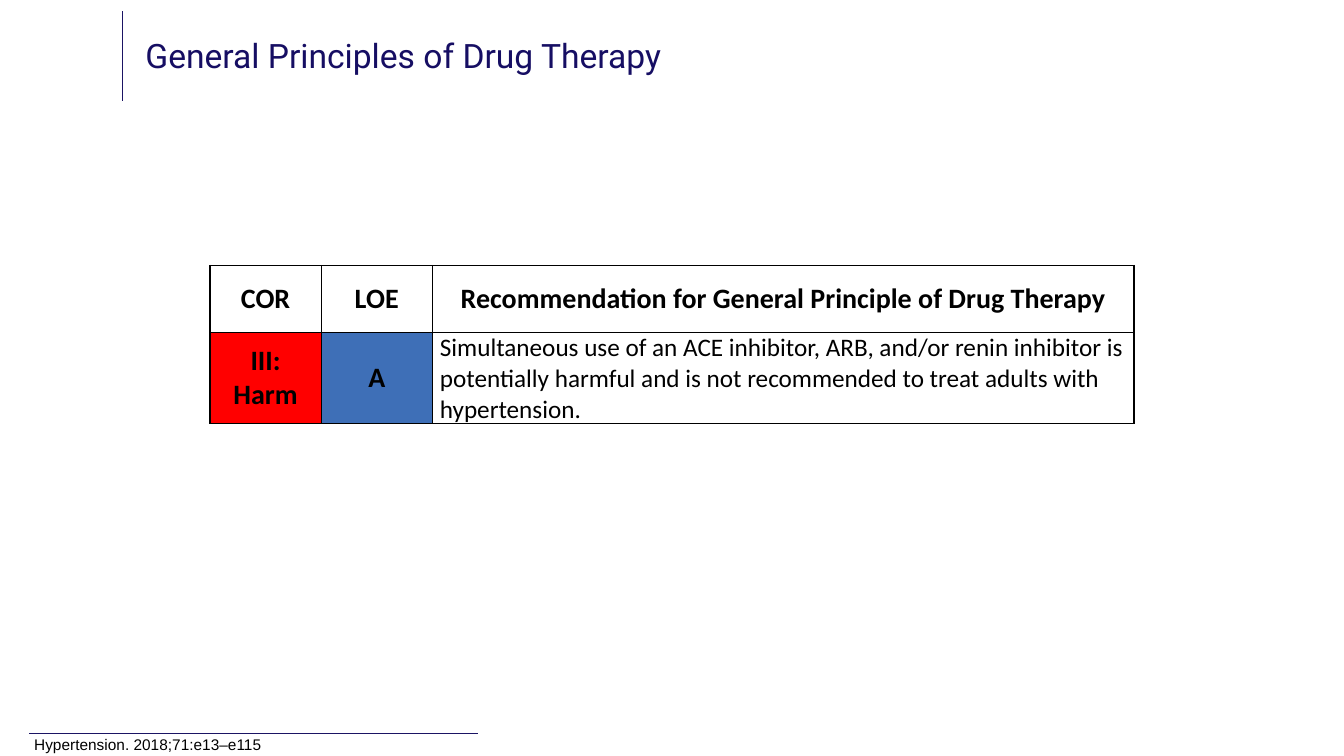
from lxml.etree import SubElement
from pptx import Presentation
from pptx.dml.color import RGBColor
from pptx.enum.shapes import MSO_CONNECTOR
from pptx.enum.text import MSO_ANCHOR, PP_ALIGN
from pptx.oxml.ns import qn
from pptx.util import Pt

HUES = {
    "rule": "1B1464",
    "title": "160E63",
    "black": "000000",
    "white": "FFFFFF",
    "harm": "FF0000",
    "level": "3E6FB7",
}
HEADS = ["COR", "LOE", "Recommendation for General Principle of Drug Therapy"]
ADVICE = [
    "III: Harm",
    "A",
    "Simultaneous use of an ACE inhibitor, ARB, and/or renin inhibitor is "
    "potentially harmful and is not recommended to treat adults with hypertension.",
]
FILLS = [["white"] * 3, ["harm", "level", "white"]]
WIDTHS = [79.4, 79.4, 501.2]
HEIGHTS = [48, 65]


def color(name):
    return RGBColor.from_string(HUES[name])


def add_run(para, text, font, size, hue, bold=False):
    run = para.add_run()
    run.text = text
    run.font.name = font
    run.font.size = Pt(size)
    run.font.bold = bold
    run.font.color.rgb = color(hue)


def add_text(slide, box, text, font, size, hue):
    frame = slide.shapes.add_textbox(*map(Pt, box)).text_frame
    frame.word_wrap = True
    frame.vertical_anchor = MSO_ANCHOR.MIDDLE
    frame.margin_top = frame.margin_bottom = 0
    para = frame.paragraphs[0]
    para.line_spacing = 0.9
    add_run(para, text, font, size, hue)


def add_rule(slide, *ends):
    rule = slide.shapes.add_connector(MSO_CONNECTOR.STRAIGHT, *map(Pt, ends))
    rule.line.color.rgb = color("rule")
    rule.line.width = Pt(0.5)
    SubElement(rule._element.spPr, qn("a:effectLst"))


def add_edges(cell):
    props = cell._tc.get_or_add_tcPr()
    for side in ("a:lnL", "a:lnR", "a:lnT", "a:lnB"):
        edge = SubElement(props, qn(side), w=str(Pt(1)))
        fill = SubElement(edge, qn("a:solidFill"))
        SubElement(fill, qn("a:srgbClr"), val=HUES["black"])


def fill_cell(cell, text, hue, prose):
    add_edges(cell)
    cell.fill.solid()
    cell.fill.fore_color.rgb = color(hue)
    cell.margin_left = cell.margin_right = Pt(5.4)
    cell.margin_top = cell.margin_bottom = 0
    cell.vertical_anchor = MSO_ANCHOR.TOP if prose else MSO_ANCHOR.MIDDLE
    para = cell.text_frame.paragraphs[0]
    para.alignment = PP_ALIGN.LEFT if prose else PP_ALIGN.CENTER
    add_run(para, text, "Calibri", 18 if prose else 20, "black", not prose)


def add_grid(slide, left, top):
    size = map(Pt, (left, top, sum(WIDTHS), sum(HEIGHTS)))
    table = slide.shapes.add_table(len(HEIGHTS), len(WIDTHS), *size).table
    table.horz_banding = False
    for col, width in zip(table.columns, WIDTHS):
        col.width = Pt(width)
    for row, height in zip(table.rows, HEIGHTS):
        row.height = Pt(height)
    for r, texts in enumerate([HEADS, ADVICE]):
        for c, text in enumerate(texts):
            fill_cell(table.cell(r, c), text, FILLS[r][c], (r, c) == (1, 2))


def main():
    deck = Presentation()
    deck.slide_width = Pt(960)
    deck.slide_height = Pt(540)
    slide = deck.slides.add_slide(deck.slide_layouts[6])
    add_rule(slide, 87.5, 8, 87.5, 72)
    add_rule(slide, 21, 523.5, 341.5, 523.5)
    add_text(slide, (96.8, 3.6, 609, 75.6), "General Principles of Drug Therapy",
             "Roboto", 24, "title")
    add_text(slide, (17.3, 525.6, 600, 14.4), "Hypertension. 2018;71:e13–e115",
             "Arial", 11, "black")
    add_grid(slide, 150, 189.6)
    deck.save("out.pptx")


if __name__ == "__main__":
    main()
